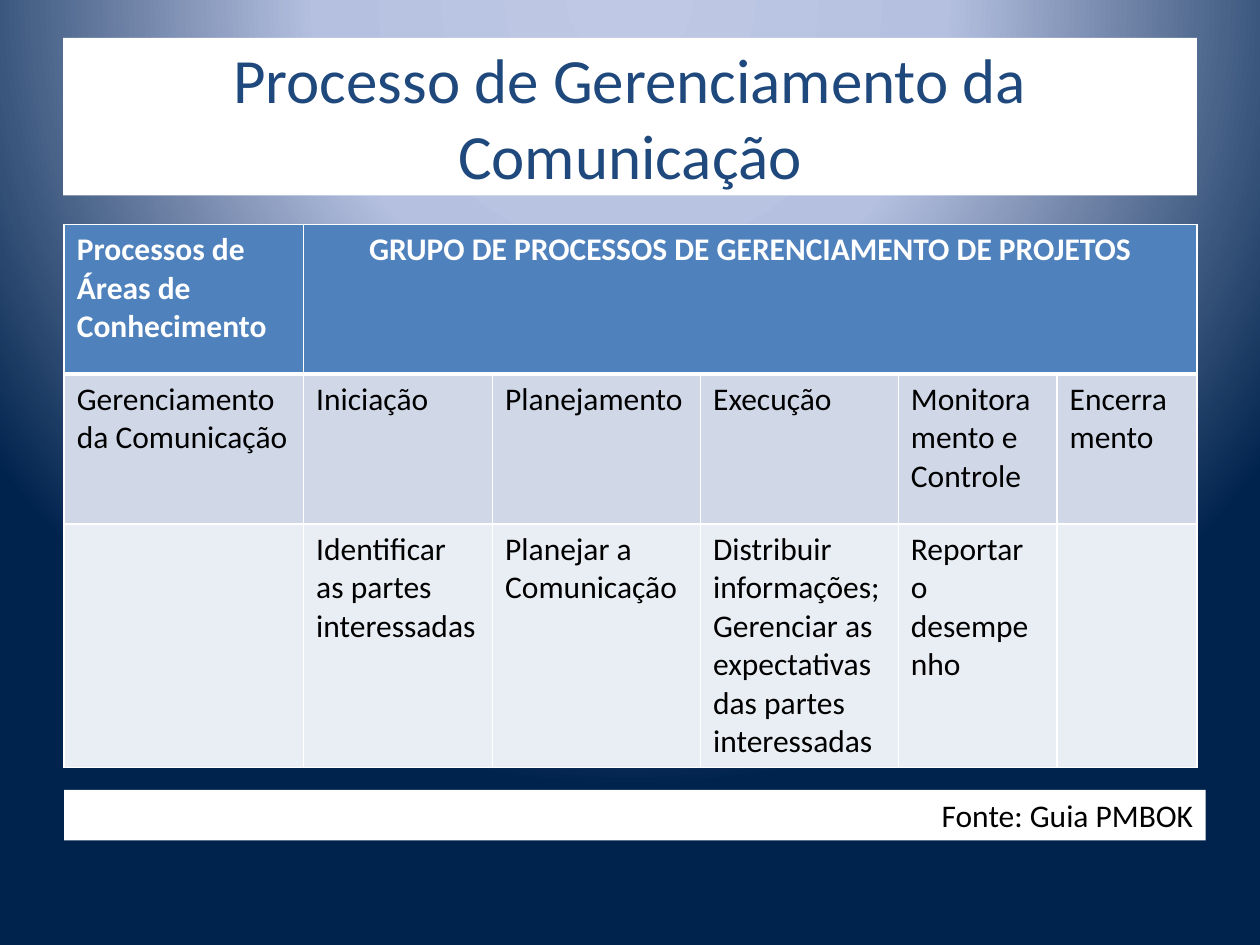
from dataclasses import dataclass

from lxml import etree
from pptx import Presentation
from pptx.dml.color import RGBColor
from pptx.enum.shapes import MSO_SHAPE
from pptx.enum.text import MSO_ANCHOR, MSO_AUTO_SIZE, PP_ALIGN
from pptx.oxml.ns import qn
from pptx.util import Pt


@dataclass(frozen=True)
class Theme:
    font: str = "Calibri"
    title_size: int = 36
    body_size: int = 18
    title: str = "1F497D"
    text: str = "000000"
    white: str = "FFFFFF"
    header: str = "4F81BD"
    band_dark: str = "D0D8E8"
    band_light: str = "E9EDF4"
    gradient: tuple = ((0, "BFC9E5"), (40, "B5C0E0"), (100, "00234D"))


@dataclass(frozen=True)
class Box:
    left: float
    top: float
    width: float
    height: float

    def lengths(self) -> tuple:
        return Pt(self.left), Pt(self.top), Pt(self.width), Pt(self.height)


@dataclass(frozen=True)
class TableRow:
    texts: tuple
    fill: str
    color: str
    bold: bool = False
    line_top: float = 1
    line_bottom: float = 1


THEME = Theme()
TITLE_BOX = Box(36, 21.6, 648, 90)
TABLE_BOX = Box(36.72, 128.16, 647.28, 257.04)
SOURCE_BOX = Box(36.72, 451.44, 652.32, 28.8)
COL_WIDTHS = (136.8, 108, 118.8, 113.04, 90.72, 79.92)
ROWS = (
    TableRow(("Processos de Áreas de Conhecimento",
              "GRUPO DE PROCESSOS DE GERENCIAMENTO DE PROJETOS", "", "", "", ""),
             THEME.header, THEME.white, bold=True, line_bottom=3),
    TableRow(("Gerenciamento da Comunicação", "Iniciação", "Planejamento",
              "Execução", "Monitoramento e Controle", "Encerramento"),
             THEME.band_dark, THEME.text, line_top=3),
    TableRow(("", "Identificar as partes interessadas", "Planejar a Comunicação",
              "Distribuir informações;\nGerenciar as expectativas das partes interessadas",
              "Reportar o desempenho", ""),
             THEME.band_light, THEME.text),
)


def add_color(parent, color: str) -> None:
    etree.SubElement(parent, qn("a:srgbClr"), val=color)


def set_background(s) -> None:
    """Circular gradient centred above the slide."""
    fill = s.background.fill
    fill.gradient()
    grad = s.background._cSld.find(".//" + qn("a:gradFill"))
    for child in list(grad):
        grad.remove(child)
    stops = etree.SubElement(grad, qn("a:gsLst"))
    for pos, color in THEME.gradient:
        add_color(etree.SubElement(stops, qn("a:gs"), pos=str(pos * 1000)), color)
    circle = etree.SubElement(grad, qn("a:path"), path="circle")
    etree.SubElement(circle, qn("a:fillToRect"),
                     l="50000", t="-80000", r="50000", b="180000")


def fill_solid(target, color: str) -> None:
    target.fill.solid()
    target.fill.fore_color.rgb = RGBColor.from_string(color)


def format_text(tf, size: float, color: str, align=PP_ALIGN.LEFT, bold: bool = False) -> None:
    for p in tf.paragraphs:
        p.alignment = align
        p.font.size = Pt(size)
        for r in p.runs:
            r.font.name = THEME.font
            r.font.size = Pt(size)
            r.font.bold = bold
            r.font.color.rgb = RGBColor.from_string(color)


def set_borders(cell, top: float, bottom: float) -> None:
    tc_pr = cell._tc.get_or_add_tcPr()
    for side, width in (("L", 1), ("R", 1), ("T", top), ("B", bottom)):
        ln = etree.SubElement(tc_pr, qn(f"a:ln{side}"), w=str(Pt(width)))
        add_color(etree.SubElement(ln, qn("a:solidFill")), THEME.white)


def add_title(s, text: str) -> None:
    sp = s.shapes.title
    sp.left, sp.top, sp.width, sp.height = TITLE_BOX.lengths()
    fill_solid(sp, THEME.white)
    tf = sp.text_frame
    tf.text = text
    tf.word_wrap = True
    tf.auto_size = MSO_AUTO_SIZE.NONE
    tf.vertical_anchor = MSO_ANCHOR.MIDDLE
    format_text(tf, THEME.title_size, THEME.title, PP_ALIGN.CENTER)


def add_process_table(s) -> None:
    table = s.shapes.add_table(len(ROWS), len(COL_WIDTHS), *TABLE_BOX.lengths()).table
    for column, width in zip(table.columns, COL_WIDTHS):
        column.width = Pt(width)
    for i, row in enumerate(ROWS):
        table.rows[i].height = Pt(85.68)
        for j, text in enumerate(row.texts):
            cell = table.cell(i, j)
            set_borders(cell, row.line_top, row.line_bottom)
            fill_solid(cell, row.fill)
            cell.text_frame.text = text
            format_text(cell.text_frame, THEME.body_size, row.color, bold=row.bold)
    # The group heading spans the five process columns
    heading = table.cell(0, 1)
    heading.merge(table.cell(0, 5))
    heading.text_frame.paragraphs[0].alignment = PP_ALIGN.CENTER


def add_source(s, text: str) -> None:
    sp = s.shapes.add_shape(MSO_SHAPE.RECTANGLE, *SOURCE_BOX.lengths())
    sp.shadow.inherit = False
    fill_solid(sp, THEME.white)
    sp.line.fill.background()
    tf = sp.text_frame
    tf.text = text
    tf.word_wrap = True
    tf.auto_size = MSO_AUTO_SIZE.SHAPE_TO_FIT_TEXT
    tf.vertical_anchor = MSO_ANCHOR.TOP
    tf.paragraphs[0].level = 1
    format_text(tf, THEME.body_size, THEME.text, PP_ALIGN.RIGHT)


def main() -> None:
    prs = Presentation()
    prs.slide_width, prs.slide_height = Pt(720), Pt(540)
    s = prs.slides.add_slide(prs.slide_layouts[5])
    set_background(s)
    add_title(s, "Processo de Gerenciamento da Comunicação")
    add_process_table(s)
    add_source(s, "Fonte: Guia PMBOK")
    prs.save("out.pptx")


if __name__ == "__main__":
    main()
